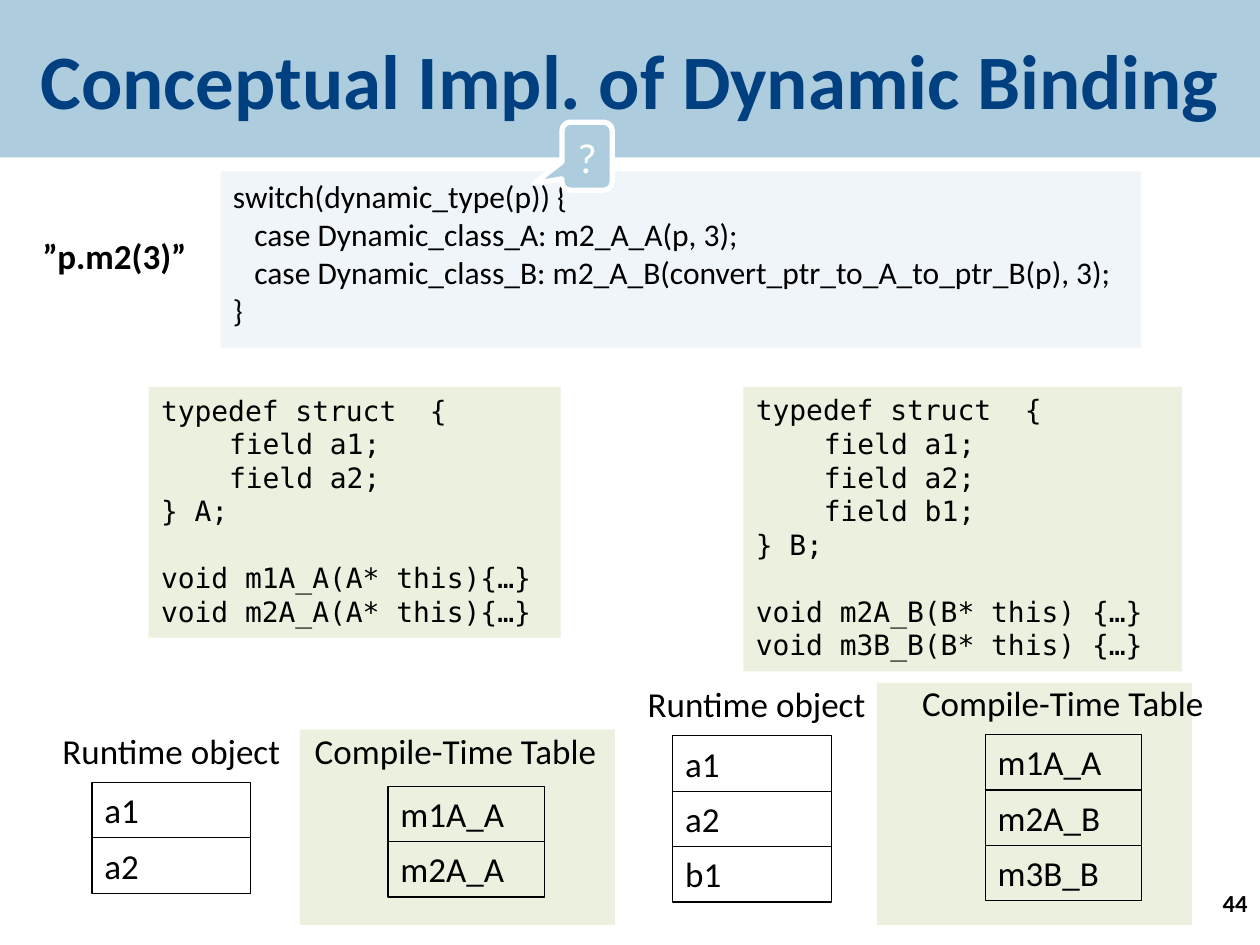
from pptx import Presentation
from pptx.dml.color import RGBColor
from pptx.enum.shapes import MSO_SHAPE
from pptx.enum.text import MSO_ANCHOR, MSO_AUTO_SIZE, PP_ALIGN
from pptx.util import Inches, Pt

RECTANGLE = MSO_SHAPE.RECTANGLE
CALLOUT = MSO_SHAPE.ROUNDED_RECTANGULAR_CALLOUT
TOP, MIDDLE = MSO_ANCHOR.TOP, MSO_ANCHOR.MIDDLE
LEFT, CENTER, RIGHT = PP_ALIGN.LEFT, PP_ALIGN.CENTER, PP_ALIGN.RIGHT
NO_AUTOFIT = MSO_AUTO_SIZE.NONE

COLORS = {
    "banner": "ADCDDF",
    "title": "004080",
    "code": "EFF5F9",
    "panel": "EBF1DE",
    "text": "000000",
    "white": "FFFFFF",
}
TITLE_ONLY = 5
CELL_HEIGHT = 0.44


class SlideBuilder:
    body_font = "Calibri"
    code_font = "DejaVu Sans Mono"

    def __init__(self, slide):
        self.slide = slide

    def color(self, name):
        return RGBColor.from_string(COLORS[name])

    def place(self, shape, box):
        for name, value in zip(("left", "top", "width", "height"), box):
            setattr(shape, name, Inches(value))

    def fill_text(self, shape, lines, size=20, font=None, color="text", bold=False,
                  align=LEFT, anchor=TOP, wrap=True, indent=0, gap=0):
        frame = shape.text_frame
        frame_format = {"auto_size": NO_AUTOFIT, "word_wrap": wrap,
                        "vertical_anchor": anchor}
        for name, value in frame_format.items():
            setattr(frame, name, value)
        font_format = {"size": Pt(size), "name": font or self.body_font, "bold": bold}
        for index, line in enumerate(lines):
            paragraph = frame.paragraphs[0] if index == 0 else frame.add_paragraph()
            level, content, gap_before = line if isinstance(line, tuple) else (0, line, False)
            paragraph.alignment = align
            if level:
                properties = paragraph._p.get_or_add_pPr()
                properties.set("marL", str(Inches(indent)))
                properties.set("indent", "0")
            if gap_before:
                paragraph.space_before = Pt(gap)
            run = paragraph.add_run()
            run.text = content
            for name, value in font_format.items():
                setattr(run.font, name, value)
            run.font.color.rgb = self.color(color)

    def title(self, text, box):
        shape = self.slide.shapes.title
        self.place(shape, box)
        shape.fill.solid()
        shape.fill.fore_color.rgb = self.color("banner")
        self.fill_text(shape, [(1, text, False)], size=44, color="title", bold=True,
                       anchor=MIDDLE, indent=0.6)

    def label(self, text, box, **style):
        shape = self.slide.shapes.add_textbox(*map(Inches, box))
        self.fill_text(shape, [text], **style)

    def box(self, box, lines=(), fill=None, line=None, line_width=0.75,
            kind=RECTANGLE, **style):
        shape = self.slide.shapes.add_shape(kind, *map(Inches, box))
        shape.shadow.inherit = False
        if fill:
            shape.fill.solid()
            shape.fill.fore_color.rgb = self.color(fill)
        else:
            shape.fill.background()
        if line:
            shape.line.color.rgb = self.color(line)
            shape.line.width = Pt(line_width)
        else:
            shape.line.fill.background()
        if lines:
            self.fill_text(shape, lines, **style)
        return shape

    def cells(self, left, top, width, names):
        for row, name in enumerate(names):
            self.box((left, top + row * CELL_HEIGHT, width, CELL_HEIGHT), [name], line="text")

    def class_code(self, box, name, fields, methods):
        lines = ["typedef struct  {"]
        lines += [(1, f"field {field};", False) for field in fields]
        lines.append(f"}} {name};")
        lines += [(0, method, index == 0) for index, method in enumerate(methods)]
        self.box(box, lines, fill="panel", size=16, font=self.code_font,
                 indent=0.54, gap=19)

    def callout(self, text, box, adjustments):
        shape = self.box(box, [text], fill="banner", line="white", line_width=3,
                         kind=CALLOUT, size=24, color="white", align=CENTER,
                         anchor=MIDDLE, wrap=False)
        for index, value in enumerate(adjustments):
            shape.adjustments[index] = value


def main():
    presentation = Presentation()
    presentation.slide_width = Inches(10)
    presentation.slide_height = Inches(7.5)
    slide = presentation.slides.add_slide(presentation.slide_layouts[TITLE_ONLY])
    builder = SlideBuilder(slide)

    builder.title("Conceptual Impl. of Dynamic Binding", (-0.38, 0, 10.38, 1.25))
    builder.label("44", (7.92, 7, 2.08, 0.5), size=14, bold=True, align=RIGHT)

    for panel in ((2.38, 5.79, 2.5, 1.55), (6.96, 5.42, 2.5, 1.92)):
        builder.box(panel, fill="panel")

    for text, left, top, width in (
        ("Runtime object", 0.24, 5.74, 2.24),
        ("Compile-Time Table", 1.96, 5.74, 3.31),
        ("Runtime object", 5.04, 5.37, 1.93),
        ("Compile-Time Table", 7.21, 5.36, 2.45),
    ):
        builder.label(text, (left, top, width, CELL_HEIGHT), align=CENTER)

    for left, top, width, names in (
        (0.73, 6.21, 1.26, ("a1", "a2")),
        (3.08, 6.24, 1.24, ("m1A_A", "m2A_A")),
        (5.34, 5.84, 1.26, ("a1", "a2", "b1")),
        (7.82, 5.83, 1.24, ("m1A_A", "m2A_B", "m3B_B")),
    ):
        builder.cells(left, top, width, names)

    builder.box((1.75, 1.36, 7.31, 1.4), [
        "switch(dynamic_type(p)) {",
        (1, "case Dynamic_class_A: m2_A_A(p, 3);", False),
        (1, "case Dynamic_class_B: m2_A_B(convert_ptr_to_A_to_ptr_B(p), 3);", False),
        "}",
    ], fill="code", size=18, indent=0.17)
    builder.callout("?", (4.46, 0.97, 0.4, 0.54), (-1.05, 0.4, 0.17))

    builder.class_code((1.18, 3.07, 3.27, 1.99), "A", ("a1", "a2"),
                       ("void m1A_A(A* this){…}", "void m2A_A(A* this){…}"))
    builder.class_code((5.9, 3.07, 3.48, 2.26), "B", ("a1", "a2", "b1"),
                       ("void m2A_B(B* this) {…}", "void m3B_B(B* this) {…}"))
    builder.label("”p.m2(3)”", (0.24, 1.81, 1.51, 0.44), bold=True)

    presentation.save("out.pptx")


if __name__ == "__main__":
    main()
